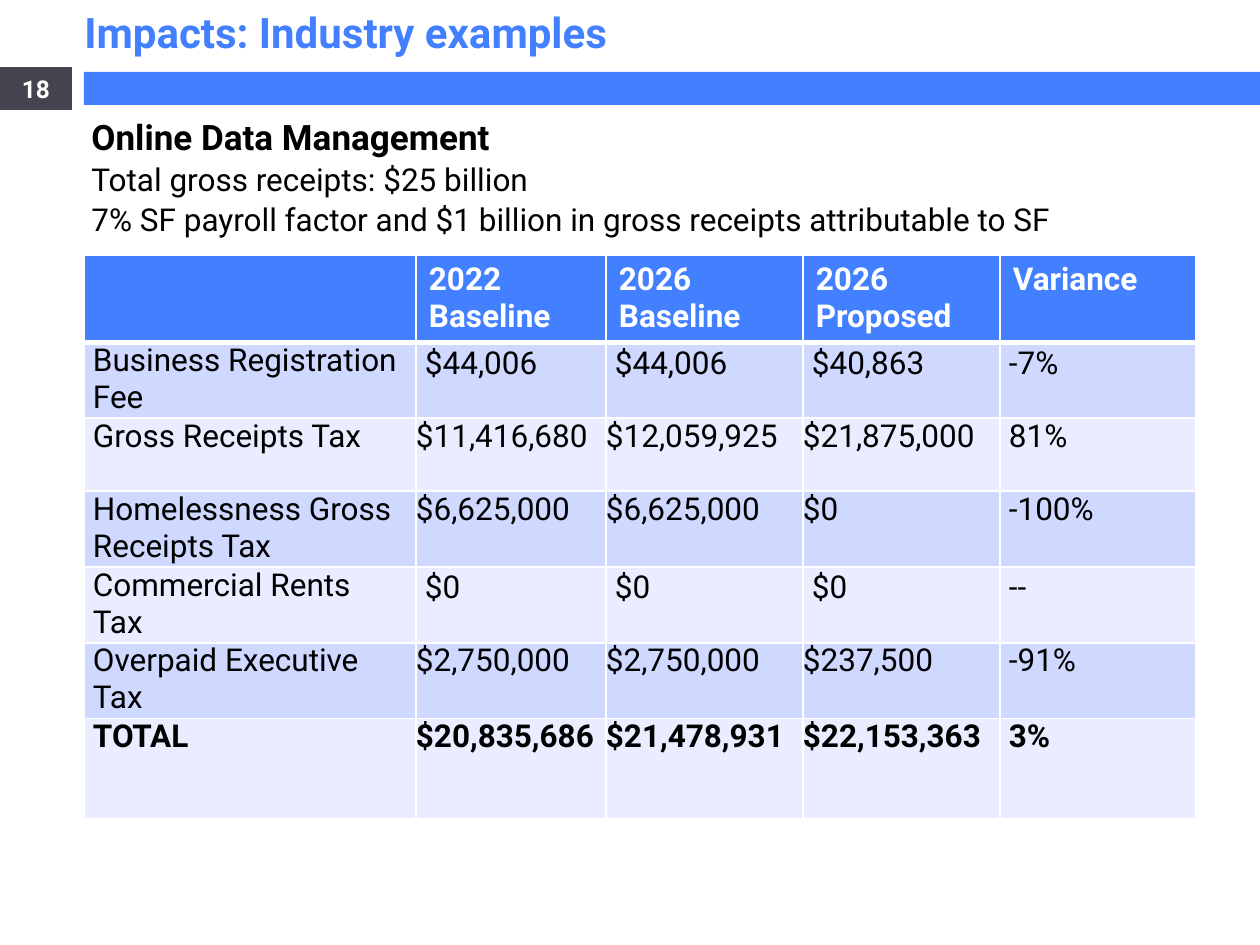
"""Build the industry impacts slide with its tax comparison table."""
import lxml.etree
import pptx
import pptx.dml.color
import pptx.enum.shapes
import pptx.enum.text
import pptx.oxml.ns
import pptx.util

PX = 914400 // 126
FONT = "Roboto"
BLUE = pptx.dml.color.RGBColor(0x42, 0x80, 0xFF)
DARK = pptx.dml.color.RGBColor(0x43, 0x44, 0x4D)
WHITE = pptx.dml.color.RGBColor(0xFF, 0xFF, 0xFF)
BLACK = pptx.dml.color.RGBColor(0, 0, 0)
BANDS = (
    pptx.dml.color.RGBColor(0xCF, 0xD8, 0xFF),
    pptx.dml.color.RGBColor(0xE9, 0xED, 0xFF),
)

COLUMN_WIDTHS = (332, 190, 197, 197, 196)
ROW_HEIGHTS = (45, 54, 73, 76, 49, 64, 100)
HEADER = ("", "2022 Baseline", "2026 Baseline", "2026 Proposed", "Variance")
TAXES = (
    ("Business Registration Fee", "$44,006", "$44,006", "$40,863", "-7%"),
    ("Gross Receipts Tax", "$11,416,680", "$12,059,925", "$21,875,000", "81%"),
    ("Homelessness Gross Receipts Tax", "$6,625,000", "$6,625,000", "$0", "-100%"),
    ("Commercial Rents Tax", "$0", "$0", "$0", "--"),
    ("Overpaid Executive Tax", "$2,750,000", "$2,750,000", "$237,500", "-91%"),
    ("TOTAL", "$20,835,686", "$21,478,931", "$22,153,363", "3%"),
)
PADDED_ROWS = ("Business Registration Fee", "Commercial Rents Tax")


def px(*lengths):
    """Turn pixel lengths into EMU."""
    return [pptx.util.Emu(length * PX) for length in lengths]


def add_run(paragraph, text, size, color, bold=False):
    """Add one styled run to a paragraph."""
    run = paragraph.add_run()
    run.text = text
    run.font.name = FONT
    run.font.size = pptx.util.Pt(size)
    run.font.bold = bold
    run.font.color.rgb = color


def add_rectangle(slide, box, color):
    """Add a plain filled rectangle."""
    shape = slide.shapes.add_shape(
        pptx.enum.shapes.MSO_SHAPE.RECTANGLE, *px(*box))
    shape.shadow.inherit = False
    shape.fill.solid()
    shape.fill.fore_color.rgb = color
    shape.line.fill.background()
    return shape


def add_text_box(slide, box):
    """Add a wrapping text box and return its first paragraph."""
    frame = slide.shapes.add_textbox(*px(*box)).text_frame
    frame.word_wrap = True
    frame.auto_size = pptx.enum.text.MSO_AUTO_SIZE.SHAPE_TO_FIT_TEXT
    return frame.paragraphs[0]


def add_page_number(slide, box, number):
    """Add the dark tab that holds the page number."""
    paragraph = add_rectangle(slide, box, DARK).text_frame.paragraphs[0]
    paragraph.alignment = pptx.enum.text.PP_ALIGN.CENTER
    add_run(paragraph, number, 14, WHITE, True)


def add_summary(slide, box, heading, lines):
    """Add a bold heading followed by plain lines."""
    paragraph = add_text_box(slide, box)
    paragraph.line_spacing = 1.07
    paragraph.space_after = pptx.util.Pt(8)
    add_run(paragraph, heading, 20, BLACK, True)
    for line in lines:
        paragraph.add_line_break()
        add_run(paragraph, line, 18, BLACK)


def set_borders(cell, bottom):
    """Draw white borders around a cell, the bottom one at its own width."""
    properties = cell._tc.get_or_add_tcPr()
    for side, width in (("L", 1), ("R", 1), ("T", 1), ("B", bottom)):
        line = lxml.etree.SubElement(
            properties, pptx.oxml.ns.qn(f"a:ln{side}"),
            w=str(pptx.util.Pt(width)))
        fill = lxml.etree.SubElement(line, pptx.oxml.ns.qn("a:solidFill"))
        lxml.etree.SubElement(
            fill, pptx.oxml.ns.qn("a:srgbClr"), val=str(WHITE))


def fill_cell(cell, text, fill, color, bold, margins, bottom=1):
    """Style a table cell and write its text."""
    set_borders(cell, bottom)
    cell.fill.solid()
    cell.fill.fore_color.rgb = fill
    side, edge = px(*margins)
    cell.margin_left = cell.margin_right = side
    cell.margin_top = cell.margin_bottom = edge
    paragraph = cell.text_frame.paragraphs[0]
    if text:
        add_run(paragraph, text, 18, color, bold)
    return paragraph


def add_tax_table(slide, left, top):
    """Add the table of taxes with banded rows."""
    table = slide.shapes.add_table(
        len(ROW_HEIGHTS), len(COLUMN_WIDTHS),
        *px(left, top, sum(COLUMN_WIDTHS), sum(ROW_HEIGHTS))).table
    for column, width in zip(table.columns, px(*COLUMN_WIDTHS)):
        column.width = width
    for row, height in zip(table.rows, px(*ROW_HEIGHTS)):
        row.height = height
    for column, text in enumerate(HEADER):
        fill_cell(table.cell(0, column), text, BLUE, WHITE, True, (13, 6), 3)
    last = len(HEADER) - 1
    for index, values in enumerate(TAXES):
        padded = values[0] in PADDED_ROWS
        for column, text in enumerate(values):
            side = 9 if padded or column in (0, last) else 0
            paragraph = fill_cell(
                table.cell(index + 1, column), text, BANDS[index % 2], BLACK,
                values[0] == "TOTAL", (side, 0))
            if padded and column > 0:
                paragraph.line_spacing = 1.07


def main():
    """Build and save the slide."""
    presentation = pptx.Presentation()
    presentation.slide_width, presentation.slide_height = px(1260, 945)
    slide = presentation.slides.add_slide(presentation.slide_layouts[6])
    add_rectangle(slide, (84, 72, 1176, 33), BLUE)
    add_page_number(slide, (0, 67, 72, 43), "18")
    title = add_text_box(slide, (72, 0, 1188, 63))
    add_run(title, "Impacts: Industry examples", 24, BLUE, True)
    add_tax_table(slide, 84, 255)
    add_summary(slide, (79, 106, 1045, 140), "Online Data Management", (
        "Total gross receipts: $25 billion",
        "7% SF payroll factor and $1 billion in gross receipts attributable to SF",
    ))
    presentation.save("out.pptx")


if __name__ == "__main__":
    main()
